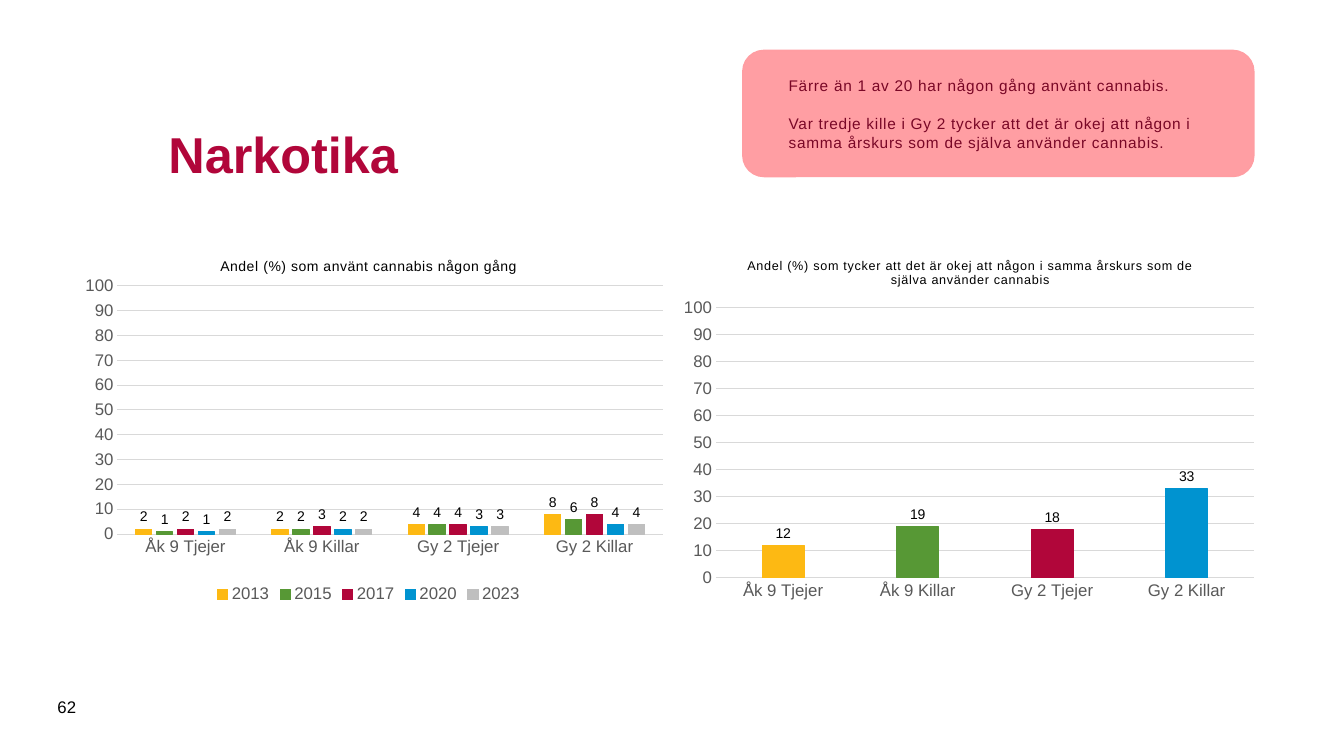
"""Build the slide on narcotics with two column charts and a callout."""
from dataclasses import dataclass

import pptx
import pptx.chart.data
import pptx.dml.color
import pptx.enum.chart
import pptx.enum.shapes
import pptx.enum.text
import pptx.oxml
import pptx.oxml.ns
import pptx.util

Cm = pptx.util.Cm
Pt = pptx.util.Pt
RGBColor = pptx.dml.color.RGBColor

YELLOW = RGBColor(0xFD, 0xB9, 0x13)
GREEN = RGBColor(0x57, 0x98, 0x35)
CRIMSON = RGBColor(0xB1, 0x06, 0x3A)
BLUE = RGBColor(0x00, 0x93, 0xD0)
SILVER = RGBColor(0xBF, 0xBF, 0xBF)
PINK = RGBColor(0xFF, 0x9D, 0xA2)
WINE = RGBColor(0x79, 0x07, 0x26)
BLACK = RGBColor(0x00, 0x00, 0x00)
AXIS_TEXT = RGBColor(0x59, 0x59, 0x59)
GRID = RGBColor(0xD9, 0xD9, 0xD9)

FONT = "Arial"
NUMBER_FORMAT = "#,##0;#,##0"
GROUPS = ("Åk 9 Tjejer", "Åk 9 Killar", "Gy 2 Tjejer", "Gy 2 Killar")


@dataclass(frozen=True)
class Series:
    """One column series, with optional colours for its single columns."""
    name: str
    values: tuple[int, ...]
    color: RGBColor
    point_colors: tuple[RGBColor, ...] = ()


@dataclass(frozen=True)
class ColumnChart:
    """A column chart: box in cm, and plot area as fractions of the box."""
    title: str
    title_size: int
    box: tuple[float, float, float, float]
    plot: tuple[float, float, float, float]
    series: tuple[Series, ...]
    has_legend: bool = False


CHARTS = (
    ColumnChart(
        "Andel (%) som tycker att det är okej att någon i samma årskurs som de själva använder cannabis",
        9, (17, 6.1, 14.9, 9.2), (0.07, 0.18, 0.91, 0.74),
        (Series("Series 1", (12, 19, 18, 33), SILVER, (YELLOW, GREEN, CRIMSON, BLUE)),),
    ),
    ColumnChart(
        "Andel (%) som använt cannabis någon gång",
        10, (1.57, 6.1, 15.44, 9.2), (0.09, 0.12, 0.89, 0.68),
        (
            Series("2013", (2, 2, 4, 8), YELLOW),
            Series("2015", (1, 2, 4, 6), GREEN),
            Series("2017", (2, 3, 4, 8), CRIMSON),
            Series("2020", (1, 2, 3, 4), BLUE),
            Series("2023", (2, 2, 3, 4), SILVER),
        ),
        has_legend=True,
    ),
)

CALLOUT = (
    "Färre än 1 av 20 har någon gång använt cannabis.",
    "Var tredje kille i Gy 2 tycker att det är okej att någon i samma årskurs som de själva använder cannabis.",
)


def style_font(font, size: float, color: RGBColor, bold: bool = False) -> None:
    """Set typeface, size, colour and weight."""
    font.name = FONT
    font.size = Pt(size)
    font.bold = bold
    font.color.rgb = color


def write_text(paragraph, text: str, *, size: float, color: RGBColor, bold: bool = False,
               spacing: float = 0, alignment=pptx.enum.text.PP_ALIGN.LEFT) -> None:
    """Write one formatted run into a paragraph."""
    paragraph.alignment = alignment
    run = paragraph.add_run()
    run.text = text
    style_font(run.font, size, color, bold)
    if spacing:
        run.font._element.set("spc", str(round(spacing * 100)))


def style_column(column_format, color: RGBColor) -> None:
    """Fill and outline a column in one colour."""
    column_format.fill.solid()
    column_format.fill.fore_color.rgb = color
    column_format.line.color.rgb = color
    column_format.line.width = Pt(0.75)


def place_plot(chart, plot: tuple[float, float, float, float]) -> None:
    """Fix the inner plot area within the chart."""
    plot_area = chart._chartSpace.chart.plotArea
    for layout in plot_area.findall(pptx.oxml.ns.qn("c:layout")):
        plot_area.remove(layout)
    modes = '<c:layoutTarget val="inner"/><c:xMode val="edge"/><c:yMode val="edge"/>'
    sides = "".join(f'<c:{side} val="{value}"/>' for side, value in zip("xywh", plot))
    plot_area.insert(0, pptx.oxml.parse_xml(
        f'<c:layout {pptx.oxml.ns.nsdecls("c")}><c:manualLayout>{modes}{sides}</c:manualLayout></c:layout>'))


def style_axes(chart) -> None:
    """Format both axes and the gridlines."""
    for axis in (chart.category_axis, chart.value_axis):
        axis.major_tick_mark = pptx.enum.chart.XL_TICK_MARK.NONE
        axis.minor_tick_mark = pptx.enum.chart.XL_TICK_MARK.NONE
        style_font(axis.tick_labels.font, 12, AXIS_TEXT)
    value_axis = chart.value_axis
    value_axis.minimum_scale, value_axis.maximum_scale = 0, 100
    value_axis.major_unit = 10
    value_axis.tick_labels.number_format = NUMBER_FORMAT
    value_axis.tick_labels.number_format_is_linked = False
    value_axis.format.line.fill.background()
    for line in (chart.category_axis.format.line, value_axis.major_gridlines.format.line):
        line.color.rgb = GRID
        line.width = Pt(0.75)


def add_column_chart(slide, content: ColumnChart) -> None:
    """Add a clustered column chart with value labels."""
    data = pptx.chart.data.CategoryChartData(number_format=NUMBER_FORMAT)
    data.categories = GROUPS
    for series in content.series:
        data.add_series(series.name, series.values)
    chart = slide.shapes.add_chart(
        pptx.enum.chart.XL_CHART_TYPE.COLUMN_CLUSTERED, *map(Cm, content.box), data).chart
    style_font(chart.font, 10, BLACK)
    write_text(chart.chart_title.text_frame.paragraphs[0], content.title, size=content.title_size,
               color=BLACK, spacing=0.5, alignment=pptx.enum.text.PP_ALIGN.CENTER)
    chart.chart_title.include_in_layout = False
    style_axes(chart)
    place_plot(chart, content.plot)
    chart.has_legend = content.has_legend
    if content.has_legend:
        chart.legend.position = pptx.enum.chart.XL_LEGEND_POSITION.BOTTOM
        chart.legend.include_in_layout = False
        style_font(chart.legend.font, 12, AXIS_TEXT)
    plot = chart.plots[0]
    plot.vary_by_categories = False
    plot.gap_width, plot.overlap = 219, -27
    for drawn, series in zip(plot.series, content.series):
        style_column(drawn.format, series.color)
        for index, color in enumerate(series.point_colors):
            style_column(drawn.points[index].format, color)
        labels = drawn.data_labels
        labels.show_value = True
        labels.position = pptx.enum.chart.XL_LABEL_POSITION.OUTSIDE_END
        labels.number_format = NUMBER_FORMAT
        labels.number_format_is_linked = False
        style_font(labels.font, 10, BLACK)


def add_title(slide, text: str) -> None:
    """Place and fill the title placeholder."""
    title = slide.shapes.title
    title.left, title.top, title.width, title.height = map(Cm, (3.99, 2.06, 26, 3.6))
    title.text_frame.vertical_anchor = pptx.enum.text.MSO_ANCHOR.MIDDLE
    write_text(title.text_frame.paragraphs[0], text, size=36, color=CRIMSON, bold=True)


def add_page_number(slide, text: str) -> None:
    """Add the page number at the bottom left."""
    frame = slide.shapes.add_textbox(*map(Cm, (1.2, 17.3, 1.45, 1.02))).text_frame
    frame.word_wrap = True
    frame.vertical_anchor = pptx.enum.text.MSO_ANCHOR.MIDDLE
    write_text(frame.paragraphs[0], text, size=12, color=BLACK)


def add_callout(slide, texts: tuple[str, ...]) -> None:
    """Add the rounded box with the key findings."""
    shape = slide.shapes.add_shape(
        pptx.enum.shapes.MSO_SHAPE.ROUNDED_RECTANGLE, *map(Cm, (18.72, 1.27, 12.88, 3.18)))
    shape.shadow.inherit = False
    shape.fill.solid()
    shape.fill.fore_color.rgb = PINK
    color = shape._element.spPr.find(".//" + pptx.oxml.ns.qn("a:srgbClr"))
    color.append(pptx.oxml.parse_xml(f'<a:alpha {pptx.oxml.ns.nsdecls("a")} val="98000"/>'))
    shape.line.color.rgb = PINK
    shape.line.width = Pt(1)
    frame = shape.text_frame
    frame.word_wrap = True
    frame.vertical_anchor = pptx.enum.text.MSO_ANCHOR.MIDDLE
    frame.margin_left = frame.margin_right = Cm(1)
    frame.margin_top = frame.margin_bottom = Cm(0.5)
    for index, text in enumerate(texts):
        paragraph = frame.add_paragraph() if index else frame.paragraphs[0]
        paragraph.line_spacing = 1.05
        paragraph.space_before = Pt(13.3 if index else 0)
        write_text(paragraph, text, size=11, color=WINE, spacing=0.5)


def main() -> None:
    """Build and save the presentation."""
    presentation = pptx.Presentation()
    presentation.slide_width, presentation.slide_height = Cm(33.87), Cm(19.05)
    slide = presentation.slides.add_slide(presentation.slide_layouts.get_by_name("Title Only"))
    add_title(slide, "Narkotika")
    for content in CHARTS:
        add_column_chart(slide, content)
    add_page_number(slide, "62")
    add_callout(slide, CALLOUT)
    presentation.save("out.pptx")


if __name__ == "__main__":
    main()
